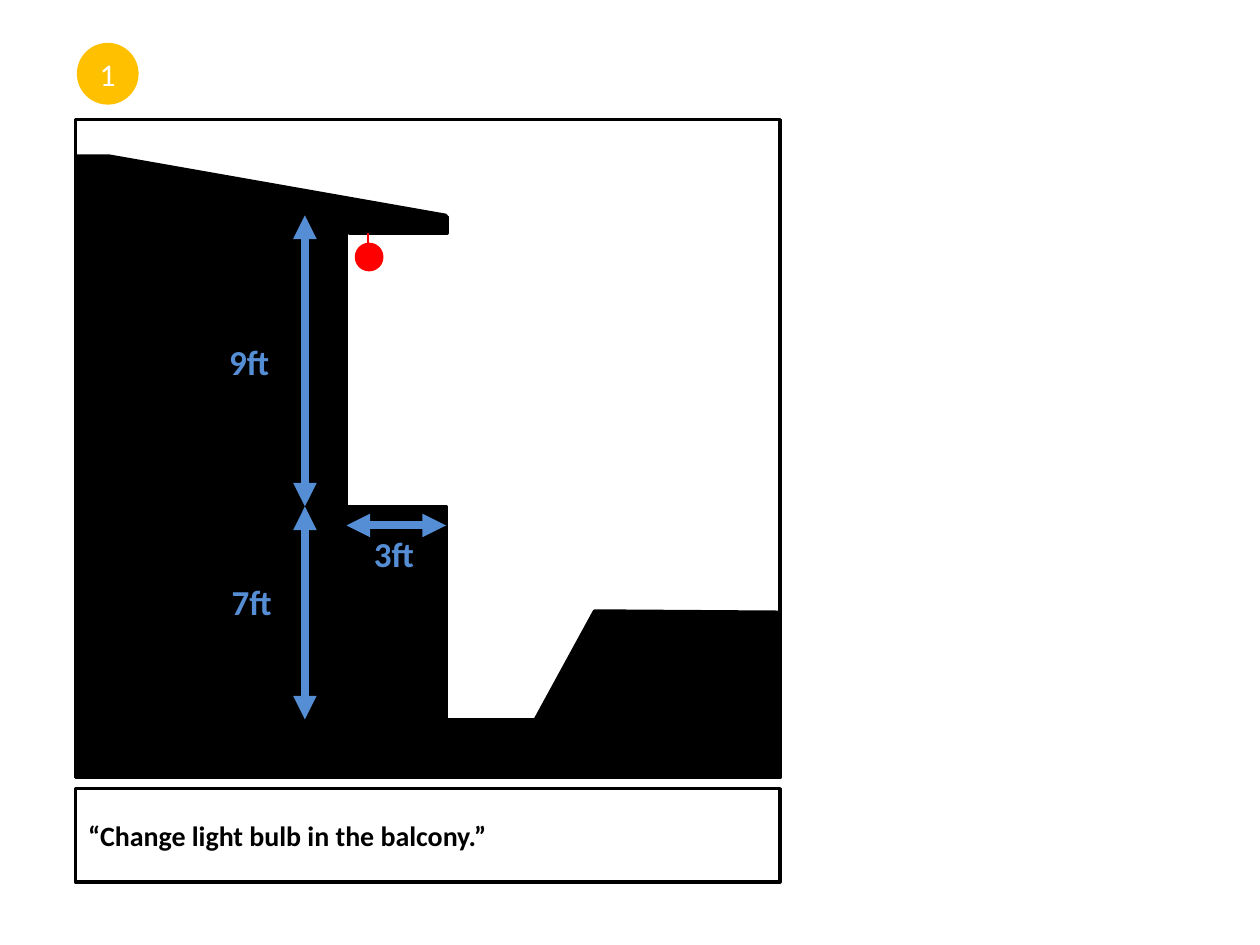
import dataclasses

import pptx
import pptx.dml.color
import pptx.enum.shapes
import pptx.enum.text
import pptx.oxml.ns
import pptx.util
import lxml.etree

Inches = pptx.util.Inches
Pt = pptx.util.Pt
Kind = pptx.enum.shapes.MSO_SHAPE
Align = pptx.enum.text.PP_ALIGN
Anchor = pptx.enum.text.MSO_ANCHOR


@dataclasses.dataclass(frozen=True)
class Theme:
    font: str = "Calibri"
    ink: str = "000000"
    paper: str = "FFFFFF"
    badge: str = "FFC000"
    measure: str = "558ED5"
    bulb: str = "FF0000"
    number: int = 18
    caption: int = 16
    label: int = 20
    edge: float = 2
    arrow: float = 4.5
    cord: float = 0.75


theme = Theme()


def color(value):
    return pptx.dml.color.RGBColor.from_string(value)


def write(shape, text, size, ink, bold=False, align=Align.LEFT,
          anchor=Anchor.MIDDLE, wrap=True):
    frame = shape.text_frame
    frame.word_wrap = wrap
    frame.vertical_anchor = anchor
    para = frame.paragraphs[0]
    para.alignment = align
    run = para.add_run()
    run.text = text
    run.font.name = theme.font
    run.font.size = Pt(size)
    run.font.bold = bold
    run.font.color.rgb = color(ink)


def paint(shape, fill, line=None):
    shape.shadow.inherit = False
    shape.fill.solid()
    shape.fill.fore_color.rgb = color(fill)
    if line:
        shape.line.color.rgb = color(line)
        shape.line.width = Pt(theme.edge)
    else:
        shape.line.fill.background()
    return shape


def block(slide, kind, box, fill, line=None):
    shape = slide.shapes.add_shape(kind, *map(Inches, box))
    return paint(shape, fill, line)


def outline(slide, points):
    """Draw a closed solid outline through points given in inches."""
    spots = [(Inches(x), Inches(y)) for x, y in points]
    build = slide.shapes.build_freeform(*spots[0], scale=1.0)
    build.add_line_segments(spots[1:], close=True)
    return paint(build.convert_to_shape(), theme.ink, theme.ink)


def child(parent, tag, **marks):
    lxml.etree.SubElement(parent, pptx.oxml.ns.qn(tag), **marks)


def rule(slide, start, end, ink, width, heads=False):
    line = slide.shapes.add_connector(
        pptx.enum.shapes.MSO_CONNECTOR.STRAIGHT, *map(Inches, start + end))
    line.line.color.rgb = color(ink)
    line.line.width = Pt(width)
    props = line._element.spPr
    if heads:
        stroke = props.find(pptx.oxml.ns.qn("a:ln"))
        for tag in ("a:headEnd", "a:tailEnd"):
            child(stroke, tag, type="triangle")
    child(props, "a:effectLst")


def badge(slide, box, text):
    shape = block(slide, Kind.OVAL, box, theme.badge)
    write(shape, text, theme.number, theme.paper, align=Align.CENTER)


def caption(slide, box, text):
    shape = block(slide, Kind.RECTANGLE, box, theme.paper, theme.ink)
    write(shape, text, theme.caption, theme.ink, bold=True)


def measure(slide, start, end, text, spot):
    rule(slide, start, end, theme.measure, theme.arrow, heads=True)
    label = slide.shapes.add_textbox(*map(Inches, spot + (0.53, 0.44)))
    write(label, text, theme.label, theme.measure, bold=True,
          anchor=Anchor.TOP, wrap=False)


def scene(slide, box):
    left, top, width, height = box
    right, base = left + width, top + height
    wall, deck = left + 2.15, left + 2.94
    eave, floor, ground = top + 0.76, top + 3.07, top + 4.76

    # Frame, then ground, lower storey and upper storey
    block(slide, Kind.RECTANGLE, box, theme.paper, theme.ink)
    inner = left + 0.01
    for low, high, edge in ((ground, base, right), (floor, ground, deck),
                            (eave, floor, wall)):
        block(slide, Kind.RECTANGLE, (inner, low, edge - inner, high - low),
              theme.ink, theme.ink)

    # Roof with its overhang, and the bank on the right
    ridge = top + 0.29
    outline(slide, [(left + 0.27, ridge), (deck, eave), (inner, eave),
                    (inner, ridge)])
    block(slide, Kind.RECTANGLE, (left + 2.17, top + 0.77, 0.78, 0.13),
          theme.ink, theme.ink)
    bank = top + 3.9
    outline(slide, [(left + 4.12, bank), (right, bank + 0.01),
                    (right, ground), (left + 3.65, ground)])

    # Dimensions
    post, span = left + 1.82, floor + 0.15
    measure(slide, (wall, span), (deck, span), "3ft",
            (left + 2.27, floor + 0.16))
    measure(slide, (post, floor), (post, eave), "9ft",
            (left + 1.12, top + 1.7))
    measure(slide, (post, ground), (post, floor), "7ft",
            (left + 1.14, top + 3.61))

    # Hanging bulb
    hook, drop = left + 2.32, top + 0.9
    rule(slide, (hook, drop), (hook, drop + 0.12), theme.bulb, theme.cord)
    block(slide, Kind.OVAL, (hook - 0.09, drop + 0.09, 0.2, 0.2),
          theme.bulb, theme.bulb)


def main():
    deck = pptx.Presentation()
    deck.slide_width, deck.slide_height = Inches(10), Inches(7.5)
    slide = deck.slides.add_slide(deck.slide_layouts[6])
    badge(slide, (0.61, 0.34, 0.49, 0.49), "1")
    caption(slide, (0.6, 6.26, 5.59, 0.74),
            "“Change light bulb in the balcony.”")
    scene(slide, (0.6, 0.95, 5.59, 5.22))
    deck.save("out.pptx")


if __name__ == "__main__":
    main()
